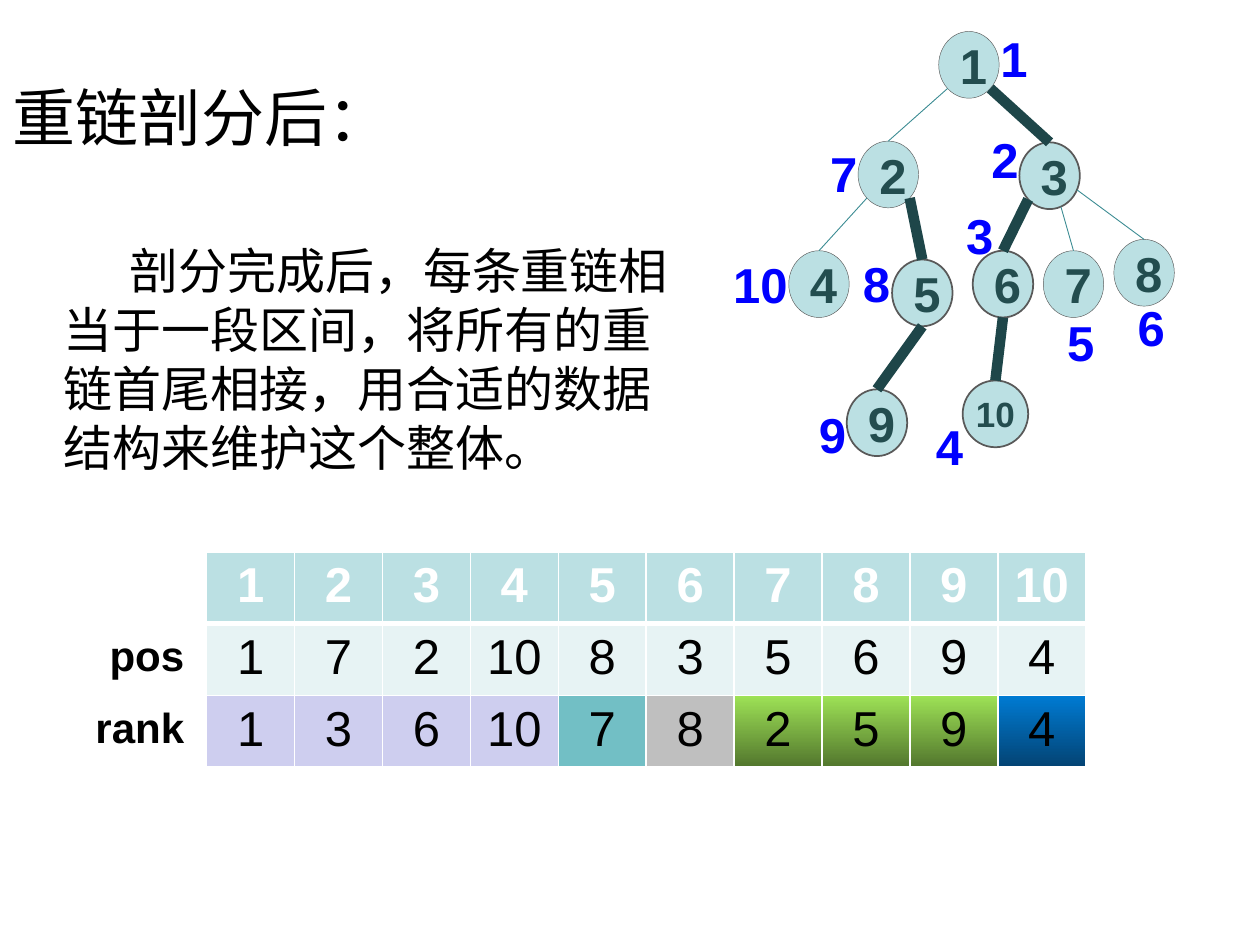
from math import cos, radians, sin

from lxml.etree import SubElement
from pptx import Presentation
from pptx.dml.color import RGBColor
from pptx.enum.shapes import MSO_CONNECTOR, MSO_SHAPE
from pptx.enum.text import MSO_ANCHOR, PP_ALIGN
from pptx.oxml.ns import qn
from pptx.util import Inches, Pt

THEME = {
    "latin": "Arial", "cjk": "Noto Sans CJK SC",
    "title": 36, "text": 28, "row_label": 24, "small": 20,
    "black": "000000", "white": "FFFFFF", "order": "0000FF",
    "node": "BBE0E3", "node_line": "595959", "node_text": "234D4F",
    "light_edge": "3C8C93", "heavy_edge": "1E4649",
    "header": "BBE0E3", "pos": "E7F3F4",
    "chain_a": "CECEEF", "chain_b": "72BFC5", "chain_c": "BFBFBF",
    "chain_d": ("9EE256", "52762D"), "chain_e": ("007BD3", "034373"),
}

TITLE = "重链剖分后："
BODY = "剖分完成后，每条重链相当于一段区间，将所有的重链首尾相接，用合适的数据结构来维护这个整体。"

# node: (left, top), visiting order, (left, top) of the order label
NODES = {
    1: ((7.45, 0.25), 1, (7.84, 0.18)),
    2: ((6.81, 1.12), 7, (6.49, 1.09)),
    3: ((8.09, 1.13), 2, (7.77, 0.98)),
    4: ((6.26, 1.99), 10, (5.72, 1.97)),
    5: ((7.08, 2.06), 8, (6.75, 1.96)),
    6: ((7.72, 1.99), 3, (7.57, 1.58)),
    7: ((8.28, 1.99), 5, (8.37, 2.43)),
    8: ((8.84, 1.90), 6, (8.93, 2.31)),
    9: ((6.72, 3.09), 9, (6.40, 3.16)),
    10: ((7.64, 3.02), 4, (7.33, 3.26)),
}
NODE_HEIGHT = 0.53

# parent, child, clockwise angle on the parent's rim, on a heavy chain
EDGES = [
    (1, 2, 135, False), (1, 3, 45, True),
    (2, 4, 135, False), (2, 5, 45, True), (5, 9, 90, True),
    (3, 6, 135, True), (3, 7, 68, False), (3, 8, 25, False),
    (6, 10, 90, True),
]
HEAVY_NODES = {child for _, child, _, heavy in EDGES if heavy}

POS = [NODES[node][1] for node in NODES]
RANK = sorted(NODES, key=lambda node: NODES[node][1])
CHAINS = [("chain_a", 4), ("chain_b", 1), ("chain_c", 1), ("chain_d", 3), ("chain_e", 1)]
TABLE_ROWS = [
    (list(NODES), ["header"] * len(NODES)),
    (POS, ["pos"] * len(NODES)),
    (RANK, [chain for chain, length in CHAINS for _ in range(length)]),
]
ROW_LABELS = [("pos", 4.95), ("rank", 5.52)]


def color(name):
    return RGBColor.from_string(THEME[name])


def write(frame, text, size, ink, bold=False, align=PP_ALIGN.LEFT):
    frame.word_wrap = True
    paragraph = frame.paragraphs[0]
    paragraph.alignment = align
    run = paragraph.add_run()
    run.text = str(text)
    font = run.font
    font.name, font.size, font.bold = THEME["latin"], Pt(THEME[size]), bold
    font.color.rgb = color(ink)
    return run


def add_text(shapes, text, left, top, width, height, *style):
    box = shapes.add_textbox(Inches(left), Inches(top), Inches(width), Inches(height))
    return write(box.text_frame, text, *style), box.text_frame


def node_width(node):
    return 0.52 if node == 10 else 0.48


def add_node(shapes, node):
    (left, top), _, _ = NODES[node]
    oval = shapes.add_shape(MSO_SHAPE.OVAL, Inches(left), Inches(top),
                            Inches(node_width(node)), Inches(NODE_HEIGHT))
    oval.shadow.inherit = False
    oval.fill.solid()
    oval.fill.fore_color.rgb = color("node")
    oval.line.color.rgb = color("node_line")
    oval.line.width = Pt(1 if node in HEAVY_NODES else 0.25)
    frame = oval.text_frame
    frame.vertical_anchor = MSO_ANCHOR.MIDDLE
    two_digits = node > 9
    if two_digits:
        frame.margin_left = frame.margin_right = frame.margin_top = frame.margin_bottom = 0
    write(frame, node, "small" if two_digits else "text", "node_text", True, PP_ALIGN.CENTER)
    return oval


def add_edge(shapes, parent, child_oval, angle, heavy):
    """Run from a point on the parent's rim to the top of the child."""
    (left, top), _, _ = NODES[parent]
    rx, ry = node_width(parent) / 2, NODE_HEIGHT / 2
    x = Inches(left + rx + rx * cos(radians(angle)))
    y = Inches(top + ry + ry * sin(radians(angle)))
    edge = shapes.add_connector(MSO_CONNECTOR.STRAIGHT, x, y, x, y)
    edge.end_connect(child_oval, 0)
    edge.line.color.rgb = color("heavy_edge" if heavy else "light_edge")
    edge.line.width = Pt(6 if heavy else 0.5)
    SubElement(edge._element.spPr, qn("a:effectLst"))


def add_tree(slide):
    shapes = slide.shapes.add_group_shape().shapes
    ovals = {node: add_node(shapes, node) for node in NODES}
    for parent, child, angle, heavy in EDGES:
        add_edge(shapes, parent, ovals[child], angle, heavy)
    for _, order, (left, top) in NODES.values():
        add_text(shapes, order, left, top, 1.09 if order > 9 else 0.39, 0.57,
                 "text", "order", True)


def set_borders(cell, top, bottom):
    properties = cell._tc.get_or_add_tcPr()
    for side, points in (("L", 1), ("R", 1), ("T", top), ("B", bottom)):
        border = SubElement(properties, qn(f"a:ln{side}"), w=str(Pt(points)))
        SubElement(SubElement(border, qn("a:solidFill")), qn("a:srgbClr"), val=THEME["white"])


def fill_cell(cell, name):
    if isinstance(THEME[name], str):
        cell.fill.solid()
        cell.fill.fore_color.rgb = color(name)
        return
    cell.fill.gradient()
    cell.fill.gradient_angle = 270
    for stop, shade in zip(cell.fill.gradient_stops, THEME[name]):
        stop.color.rgb = RGBColor.from_string(shade)


def add_order_table(slide):
    table = slide.shapes.add_table(len(TABLE_ROWS), len(NODES), Inches(1.64), Inches(4.38),
                                   Inches(6.98), Inches(1.71)).table
    table.horz_banding = False
    for r, (values, fills) in enumerate(TABLE_ROWS):
        header = r == 0
        for c, (value, fill) in enumerate(zip(values, fills)):
            cell = table.cell(r, c)
            set_borders(cell, 3 if r == 1 else 1, 3 if header else 1)
            fill_cell(cell, fill)
            write(cell.text_frame, value, "text", "white" if header else "black",
                  header, PP_ALIGN.CENTER)
    for label, top in ROW_LABELS:
        add_text(slide.shapes, label, 0.41, top, 1.15, 0.5,
                 "row_label", "black", True, PP_ALIGN.RIGHT)


def main():
    deck = Presentation()
    deck.slide_width, deck.slide_height = Inches(10), Inches(7.5)
    slide = deck.slides.add_slide(deck.slide_layouts[5])

    title = slide.shapes.title
    title.left, title.top, title.width, title.height = map(Inches, (0, 0.3, 9, 1.25))
    title.text_frame.vertical_anchor = MSO_ANCHOR.MIDDLE
    heading = write(title.text_frame, TITLE, "title", "black")
    heading.font.name = THEME["cjk"]
    SubElement(heading._r.get_or_add_rPr(), qn("a:ea"), typeface=THEME["cjk"])

    add_order_table(slide)
    add_tree(slide)
    _, body = add_text(slide.shapes, BODY, 0.41, 1.86, 5.23, 1.99, "text", "black")
    body.paragraphs[0]._p.get_or_add_pPr().set("indent", str(Inches(0.52)))

    deck.save("out.pptx")


if __name__ == "__main__":
    main()
